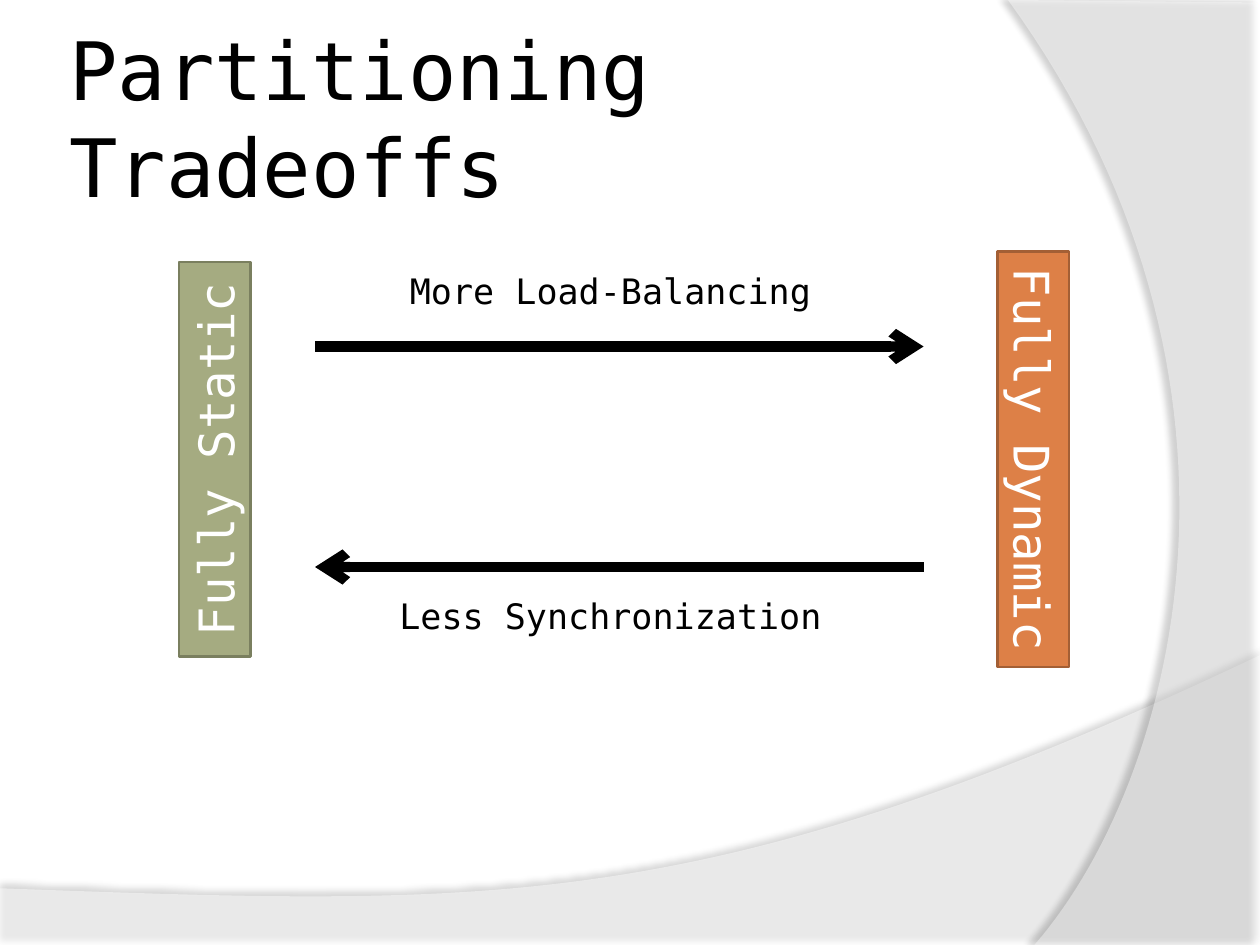
from lxml.etree import SubElement
from pptx import Presentation
from pptx.dml.color import RGBColor
from pptx.enum.shapes import MSO_CONNECTOR, MSO_SHAPE
from pptx.enum.text import MSO_ANCHOR, MSO_AUTO_SIZE, PP_ALIGN
from pptx.oxml.ns import qn
from pptx.util import Inches, Pt

BLACK = RGBColor(0, 0, 0)
WHITE = RGBColor(255, 255, 255)
GREEN = RGBColor(0xA5, 0xAB, 0x81)
OLIVE = RGBColor(0x7A, 0x7F, 0x5F)
ORANGE = RGBColor(0xDD, 0x80, 0x47)
BROWN = RGBColor(0xA3, 0x5F, 0x35)


def curve(a, b, c, d, steps=60):
    """Return points along a cubic curve, both ends included."""
    points = []
    for i in range(steps + 1):
        t = i / steps
        u = 1 - t
        points.append(tuple(
            u**3 * p + 3 * u * u * t * q + 3 * u * t * t * r + t**3 * s
            for p, q, r, s in zip(a, b, c, d)))
    return points


class Deck:
    """Hold the style and the current slide."""

    font = "DejaVu Sans Mono"
    grow = {"word_wrap": True, "auto_size": MSO_AUTO_SIZE.SHAPE_TO_FIT_TEXT}
    head = {"word_wrap": True, "vertical_anchor": MSO_ANCHOR.MIDDLE,
            "margin_left": Inches(0.05), "margin_right": Inches(0.05)}

    def __init__(self):
        self.prs = Presentation()
        self.prs.slide_width, self.prs.slide_height = Inches(10), Inches(7.5)
        self.slide = self.prs.slides.add_slide(self.prs.slide_layouts[6])
        self.shapes = self.slide.shapes

    def label(self, shape, text, size, color, align, form):
        frame = shape.text_frame
        for name, value in form.items():
            setattr(frame, name, value)
        para = frame.paragraphs[0]
        para.alignment = align
        run = para.add_run()
        run.text = text
        for name, value in {"name": self.font, "size": Pt(size)}.items():
            setattr(run.font, name, value)
        run.font.color.rgb = color

    def text(self, box, text, size, align=PP_ALIGN.CENTER, form=grow):
        shape = self.shapes.add_textbox(*map(Inches, box))
        self.label(shape, text, size, BLACK, align, form)

    def bar(self, box, turn, text, fill, edge):
        shape = self.shapes.add_shape(MSO_SHAPE.RECTANGLE, *map(Inches, box))
        shape.shadow.inherit = False
        shape.rotation = turn
        shape.fill.solid()
        shape.fill.fore_color.rgb = fill
        shape.line.color.rgb = edge
        shape.line.width = Pt(1.5)
        self.label(shape, text, 28, WHITE, PP_ALIGN.CENTER, self.grow)

    def arrow(self, start, end, y):
        line = self.shapes.add_connector(
            MSO_CONNECTOR.STRAIGHT, *map(Inches, (start, y, end, y)))
        line.line.color.rgb = BLACK
        line.line.width = Pt(5.75)
        props = line._element.spPr
        SubElement(props.find(qn("a:ln")), qn("a:tailEnd"), type="arrow")
        SubElement(props, qn("a:effectLst"))

    def wave(self, points, alpha, shade, dist, angle):
        first, *rest = [tuple(map(Inches, p)) for p in points]
        pen = self.shapes.build_freeform(*first)
        pen.add_line_segments(rest, close=True)
        shape = pen.convert_to_shape()
        shape.line.fill.background()
        shape.fill.solid()
        shape.fill.fore_color.rgb = WHITE
        props = shape._element.spPr
        tone = props.find(qn("a:solidFill"))[0]
        SubElement(tone, qn("a:alpha"), val=str(alpha * 1000))
        shape.shadow.inherit = False
        cast = SubElement(
            props.find(qn("a:effectLst")), qn("a:outerShdw"),
            blurRad=str(int(Pt(4))), dist=str(int(Pt(dist))),
            dir=str(angle * 60000), algn="ctr", rotWithShape="0")
        tone = SubElement(cast, qn("a:srgbClr"), val=str(BLACK))
        SubElement(tone, qn("a:alpha"), val=str(shade * 1000))


def main():
    deck = Deck()
    low = curve((10, 5.2), (5.59, 7.29), (3.91, 7.19), (0, 7.05))
    deck.wave([(0, 7.51), (10, 7.51), *low], 45, 35, 3.5, 270)
    side = curve((8.21, 7.5), (9.35, 6.19), (10.18, 3), (8, 0))
    deck.wave([(10, 0.02), (10, 7.5), *side], 40, 45, 4, 180)

    deck.text((0.5, 0.3, 8.17, 1.25), "Partitioning Tradeoffs", 46,
              PP_ALIGN.LEFT, deck.head)
    deck.bar((0.14, 3.36, 3.13, 0.57), 270, "Fully Static", GREEN, OLIVE)
    deck.bar((6.55, 3.36, 3.3, 0.57), 90, "Fully Dynamic", ORANGE, BROWN)

    left, right = 2.5, 7.33
    deck.arrow(right, left, 4.5)
    deck.arrow(left, right, 2.75)
    for top, label in ((2.09, "More Load-Balancing"),
                       (4.67, "Less Synchronization")):
        deck.text((2.97, top, 3.75, 0.44), label, 20)
    deck.prs.save("out.pptx")


if __name__ == "__main__":
    main()
